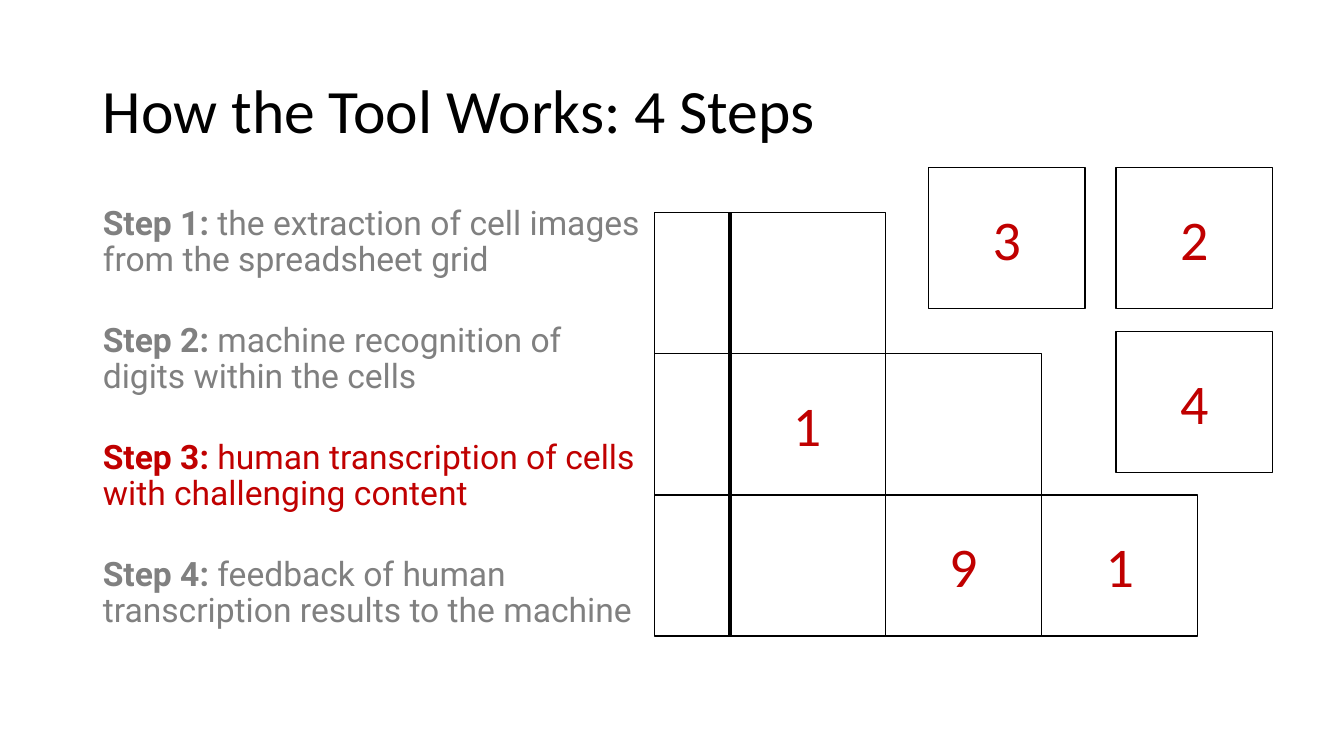
from pptx import Presentation
from pptx.dml.color import RGBColor
from pptx.enum.shapes import MSO_SHAPE
from pptx.enum.text import MSO_ANCHOR, MSO_AUTO_SIZE, PP_ALIGN
from pptx.oxml.ns import qn
from pptx.util import Inches, Pt

BLACK = RGBColor(0x00, 0x00, 0x00)
GRAY = RGBColor(0x80, 0x80, 0x80)
RED = RGBColor(0xC0, 0x00, 0x00)

RECTANGLE = MSO_SHAPE.RECTANGLE
MIDDLE, TOP = MSO_ANCHOR.MIDDLE, MSO_ANCHOR.TOP
LEFT, CENTER = PP_ALIGN.LEFT, PP_ALIGN.CENTER
NO_AUTOFIT = MSO_AUTO_SIZE.NONE

CELL_WIDTH, CELL_HEIGHT = 1.55, 1.4
EDGE_WIDTH = 0.76   # narrow cells along the grid's left edge
EDGE_STEP = 0.74

STEPS = [
    ("Step 1: ", "the extraction of cell images from the spreadsheet grid", GRAY),
    ("Step 2: ", "machine recognition of digits within the cells", GRAY),
    ("Step 3: ", "human transcription of cells with challenging content", RED),
    ("Step 4: ", "feedback of human transcription results to the machine", GRAY),
]
GRID_ROWS = [
    [""],
    ["1", ""],
    ["", "9", "1"],
]
LOOSE_CELLS = [(9.21, 1.66, "3"), (11.07, 1.66, "2"), (11.07, 3.29, "4")]


def place(shape, left, top, width, height):
    shape.left, shape.top = Inches(left), Inches(top)
    shape.width, shape.height = Inches(width), Inches(height)


def style_font(font, name, size, color, bold=False):
    font.name, font.size, font.bold = name, Pt(size), bold
    font.color.rgb = color


def add_title(slide, left, top, width, height):
    title = slide.shapes.title
    place(title, left, top, width, height)
    frame = title.text_frame
    frame.text = "How the Tool Works: 4 Steps"
    frame.auto_size = NO_AUTOFIT
    frame.vertical_anchor = MIDDLE
    paragraph = frame.paragraphs[0]
    paragraph.alignment = LEFT
    paragraph.line_spacing = 0.9
    style_font(paragraph.runs[0].font, "Calibri", 44, BLACK)


def add_steps(slide, left, top, width, height):
    body = slide.placeholders[1]
    place(body, left, top, width, height)
    frame = body.text_frame
    frame.auto_size = NO_AUTOFIT
    frame.vertical_anchor = TOP
    for index, (label, description, color) in enumerate(STEPS):
        paragraph = frame.add_paragraph() if index else frame.paragraphs[0]
        properties = paragraph._p.get_or_add_pPr()
        properties.set("marL", "0")
        properties.set("indent", "0")
        properties.append(properties.makeelement(qn("a:buNone"), {}))
        paragraph.line_spacing = 0.9
        paragraph.space_before = Pt(31.6 if index else 0)
        for text, bold in ((label, True), (description, False)):
            run = paragraph.add_run()
            run.text = text
            style_font(run.font, "Roboto", 24, color, bold)


def add_cell(slide, left, top, width=CELL_WIDTH, digit=""):
    cell = slide.shapes.add_shape(
        RECTANGLE, Inches(left), Inches(top), Inches(width), Inches(CELL_HEIGHT))
    cell.shadow.inherit = False
    cell.fill.background()
    cell.line.color.rgb = BLACK
    cell.line.width = Pt(1)
    if digit:
        frame = cell.text_frame
        frame.text = digit
        frame.vertical_anchor = MIDDLE
        paragraph = frame.paragraphs[0]
        paragraph.alignment = CENTER
        style_font(paragraph.runs[0].font, "Calibri", 40, RED)


def add_grid(slide, left, top):
    """Draw the stepped grid, each row starting with a narrow edge cell."""
    for row, digits in enumerate(GRID_ROWS):
        row_top = top + row * CELL_HEIGHT
        add_cell(slide, left, row_top, EDGE_WIDTH)
        for column, digit in enumerate(digits):
            cell_left = left + EDGE_STEP + column * CELL_WIDTH
            add_cell(slide, cell_left, row_top, digit=digit)


def main():
    presentation = Presentation()
    presentation.slide_width = Inches(13.33)
    presentation.slide_height = Inches(7.5)
    slide = presentation.slides.add_slide(presentation.slide_layouts[1])
    add_title(slide, 0.92, 0.4, 11.5, 1.45)
    add_steps(slide, 0.92, 2, 5.57, 4.76)
    add_grid(slide, 6.49, 2.11)
    for left, top, digit in LOOSE_CELLS:
        add_cell(slide, left, top, digit=digit)
    presentation.save("out.pptx")


if __name__ == "__main__":
    main()
